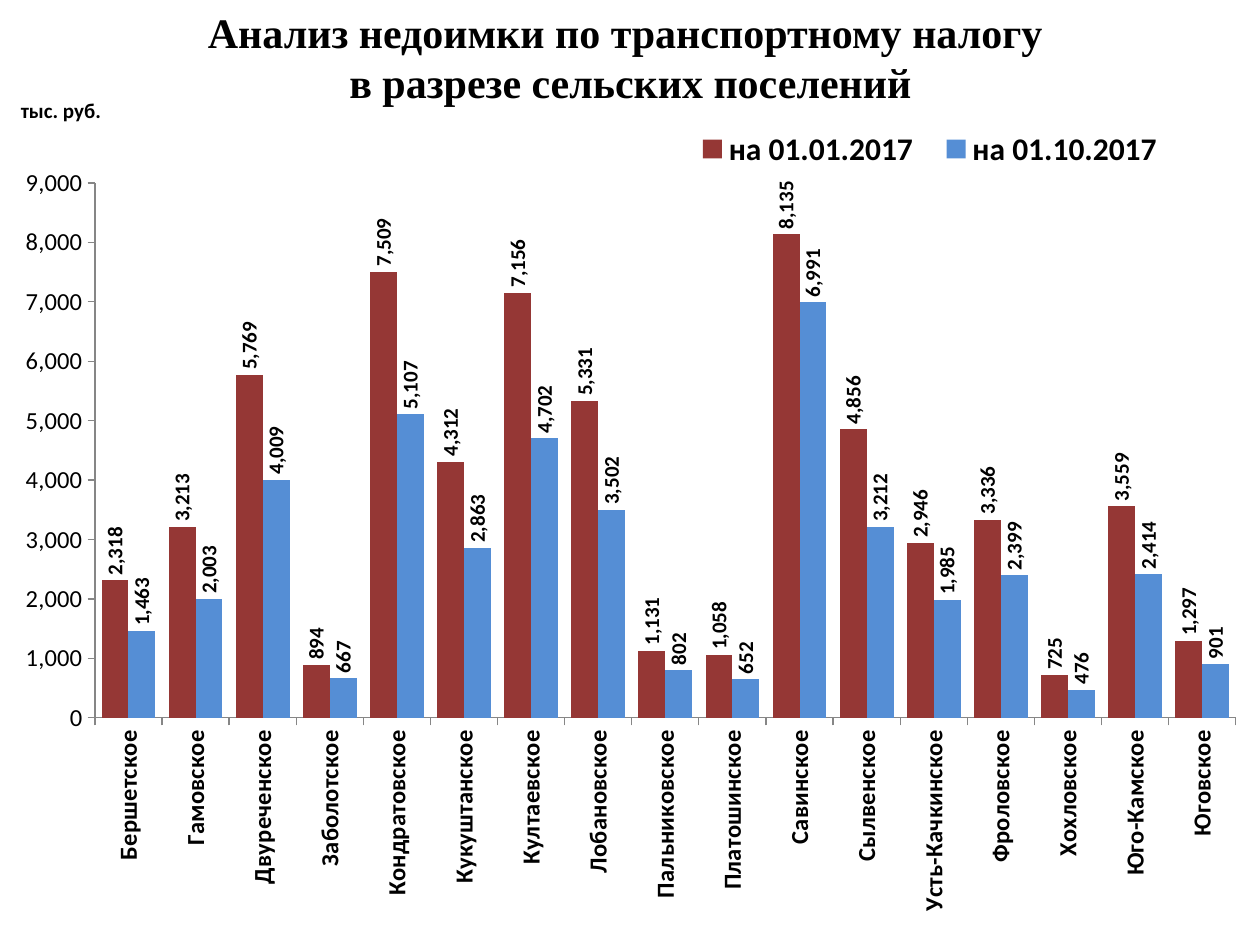
from dataclasses import dataclass

from lxml import etree
from pptx import Presentation
from pptx.chart.data import CategoryChartData
from pptx.dml.color import RGBColor
from pptx.enum.chart import XL_CHART_TYPE, XL_LABEL_POSITION, XL_LEGEND_POSITION, XL_TICK_MARK
from pptx.enum.text import MSO_ANCHOR, MSO_AUTO_SIZE, PP_ALIGN
from pptx.oxml.ns import qn
from pptx.util import Emu, Pt

CLUSTERED = XL_CHART_TYPE.COLUMN_CLUSTERED
OUTSIDE_END = XL_LABEL_POSITION.OUTSIDE_END
LEGEND_BOTTOM = XL_LEGEND_POSITION.BOTTOM
TICK_OUTSIDE = XL_TICK_MARK.OUTSIDE
TICK_NONE = XL_TICK_MARK.NONE
MIDDLE = MSO_ANCHOR.MIDDLE
NO_FIT = MSO_AUTO_SIZE.NONE
CENTER = PP_ALIGN.CENTER

EMU_PER_PX = 914400 / 126
SLIDE_SIZE = (1260, 945)
TITLE_BOX = (25, 37, 1211, 39)
CHART_BOX = (15, 55, 1230, 873)
PLOT_BOX = (95, 183, 1141, 535)
LEGEND_BOX = (680, 130, 500, 34)
UNIT_POSITION = (17, 92)
VERTICAL = -5400000
NUMBER_FORMAT = "#,##0"


@dataclass(frozen=True)
class Theme:
    heading_font: str = "Times New Roman"
    body_font: str = "Calibri"
    text: RGBColor = RGBColor(0, 0, 0)
    axis: RGBColor = RGBColor(0x86, 0x86, 0x86)
    january: RGBColor = RGBColor(0x95, 0x37, 0x35)
    october: RGBColor = RGBColor(0x55, 0x8E, 0xD5)
    title_size: int = 24
    legend_size: int = 18
    axis_size: int = 14
    label_size: int = 12


THEME = Theme()
TITLE = "Анализ недоимки по транспортному налогу \vв разрезе сельских поселений"
UNIT = "тыс. руб."
DATES = ("на 01.01.2017", "на 01.10.2017")
ARREARS = (
    ("Бершетское", 2318, 1463),
    ("Гамовское", 3213, 2003),
    ("Двуреченское", 5769, 4009),
    ("Заболотское", 894, 667),
    ("Кондратовское", 7509, 5107),
    ("Кукуштанское", 4312, 2863),
    ("Култаевское", 7156, 4702),
    ("Лобановское", 5331, 3502),
    ("Пальниковское", 1131, 802),
    ("Платошинское", 1058, 652),
    ("Савинское", 8135, 6991),
    ("Сылвенское", 4856, 3212),
    ("Усть-Качкинское", 2946, 1985),
    ("Фроловское", 3336, 2399),
    ("Хохловское", 725, 476),
    ("Юго-Камское", 3559, 2414),
    ("Юговское", 1297, 901),
)


def px(*lengths):
    return [Emu(round(length * EMU_PER_PX)) for length in lengths]


def style_font(font, size, bold=False, name=THEME.body_font):
    font.name, font.size, font.bold = name, Pt(size), bold
    font.color.rgb = THEME.text


def rotate_text(element, angle):
    body = next(element.iter(qn("a:bodyPr")))
    body.set("rot", str(angle))
    body.set("vert", "horz")


def place_in_chart(part, box, inner=False):
    """Give a chart part a fixed place, from slide px to chart fractions."""
    old = part.find(qn("c:layout"))
    if old is not None:
        part.remove(old)
    layout = etree.Element(qn("c:layout"))
    overlay = part.find(qn("c:overlay"))
    if overlay is None:
        part.insert(0, layout)
    else:
        overlay.addprevious(layout)
    manual = etree.SubElement(layout, qn("c:manualLayout"))
    left, top, width, height = CHART_BOX
    fractions = [(box[0] - left) / width, (box[1] - top) / height]
    fractions += [length / full for length, full in zip(box[2:], (width, height))]
    settings = [("layoutTarget", "inner")] if inner else []
    settings += [("xMode", "edge"), ("yMode", "edge")]
    settings += [(key, f"{value:.4f}") for key, value in zip("xywh", fractions)]
    for tag, value in settings:
        etree.SubElement(manual, qn(f"c:{tag}")).set("val", value)


def add_title(slide):
    title = slide.shapes.title
    title.left, title.top, title.width, title.height = px(*TITLE_BOX)
    frame = title.text_frame
    frame.text = TITLE
    frame.auto_size, frame.vertical_anchor = NO_FIT, MIDDLE
    paragraph = frame.paragraphs[0]
    paragraph.alignment = CENTER
    style_font(paragraph.font, THEME.title_size, True, THEME.heading_font)


def style_axis(axis, bold):
    axis.has_major_gridlines = False
    axis.major_tick_mark, axis.minor_tick_mark = TICK_OUTSIDE, TICK_NONE
    axis.format.line.color.rgb = THEME.axis
    axis.format.line.width = Pt(0.75)
    style_font(axis.tick_labels.font, THEME.axis_size, bold)


def style_value_axis(axis):
    style_axis(axis, False)
    axis.minimum_scale, axis.maximum_scale, axis.major_unit = 0, 9000, 1000
    axis.tick_labels.number_format = NUMBER_FORMAT
    axis.tick_labels.number_format_is_linked = False
    unit = axis.axis_title
    unit.text_frame.text = UNIT
    style_font(unit.text_frame.paragraphs[0].font, THEME.label_size, True)
    rotate_text(unit._element, 0)
    place_in_chart(unit._element, UNIT_POSITION)


def style_series(series, color):
    series.format.fill.solid()
    series.format.fill.fore_color.rgb = color
    series.invert_if_negative = False
    labels = series.data_labels
    labels.show_value, labels.position = True, OUTSIDE_END
    labels.number_format, labels.number_format_is_linked = NUMBER_FORMAT, False
    style_font(labels.font, THEME.label_size, True)
    rotate_text(labels._element, VERTICAL)


def add_arrears_chart(slide):
    settlements, *arrears_by_date = zip(*ARREARS)
    data = CategoryChartData(number_format=NUMBER_FORMAT)
    data.categories = settlements
    for date, arrears in zip(DATES, arrears_by_date):
        data.add_series(date, arrears)
    chart = slide.shapes.add_chart(CLUSTERED, *px(*CHART_BOX), data).chart
    style_font(chart.font, THEME.legend_size)
    chart.has_title = False

    # Columns
    plot = chart.plots[0]
    plot.gap_width, plot.overlap, plot.vary_by_categories = 50, 0, False
    for series, color in zip(plot.series, (THEME.january, THEME.october)):
        style_series(series, color)
    place_in_chart(chart._chartSpace.chart.plotArea, PLOT_BOX, inner=True)

    # Axes
    style_axis(chart.category_axis, True)
    rotate_text(chart.category_axis._element, VERTICAL)
    style_value_axis(chart.value_axis)

    # Legend
    chart.has_legend = True
    legend = chart.legend
    legend.position, legend.include_in_layout = LEGEND_BOTTOM, False
    style_font(legend.font, THEME.legend_size, True)
    place_in_chart(legend._element, LEGEND_BOX)


def main():
    deck = Presentation()
    deck.slide_width, deck.slide_height = px(*SLIDE_SIZE)
    slide = deck.slides.add_slide(deck.slide_layouts[5])
    add_title(slide)
    add_arrears_chart(slide)
    deck.save("out.pptx")


if __name__ == "__main__":
    main()
